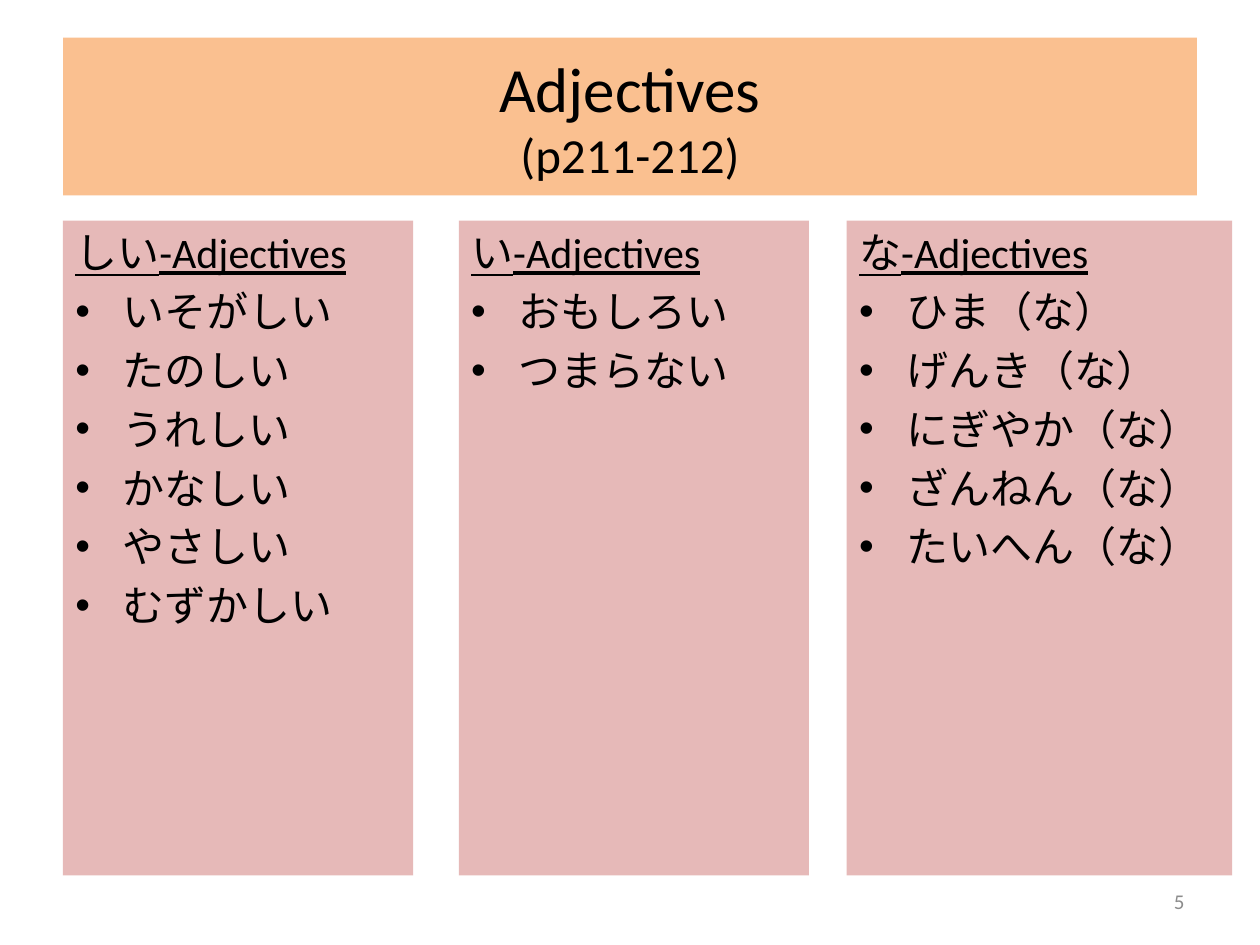
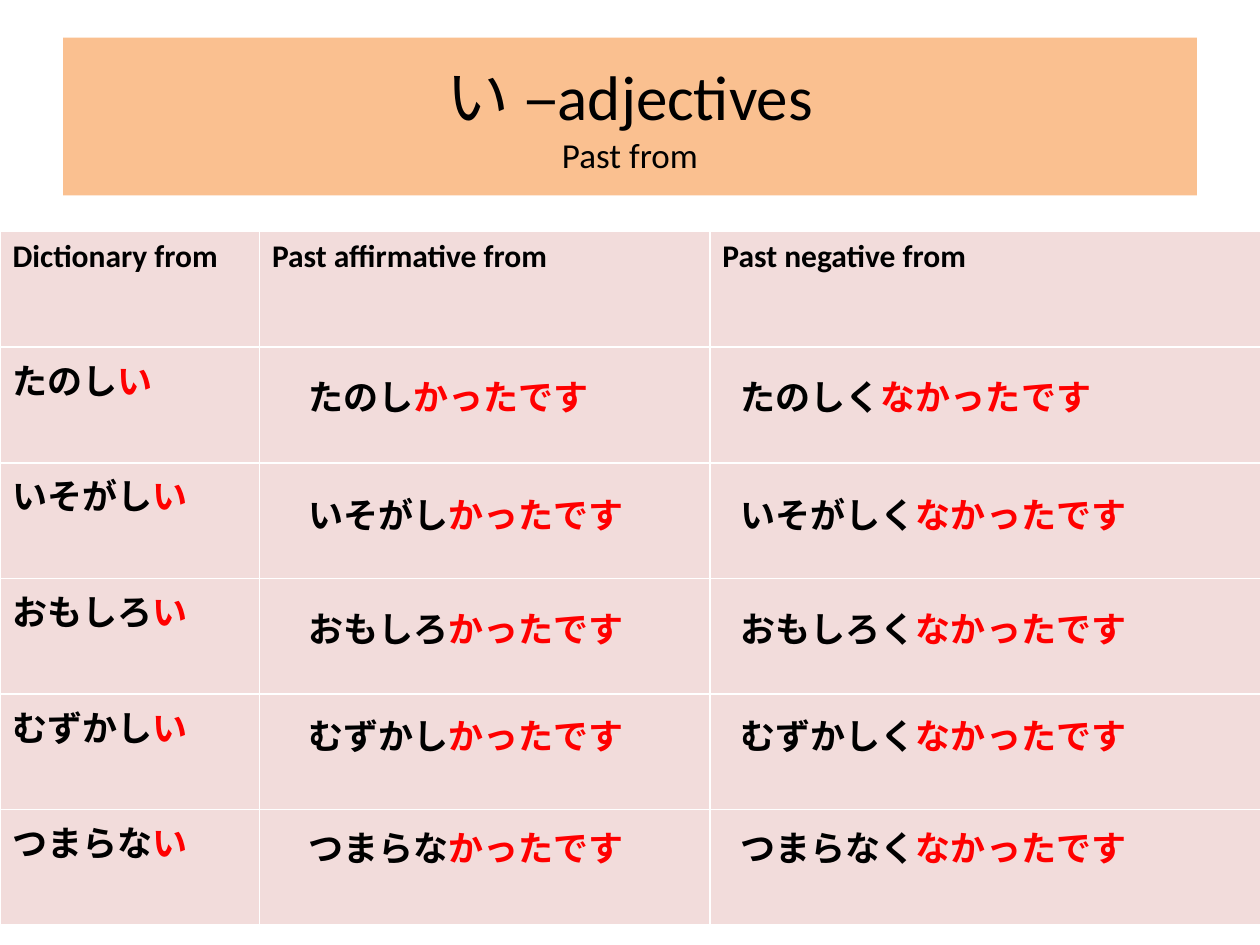
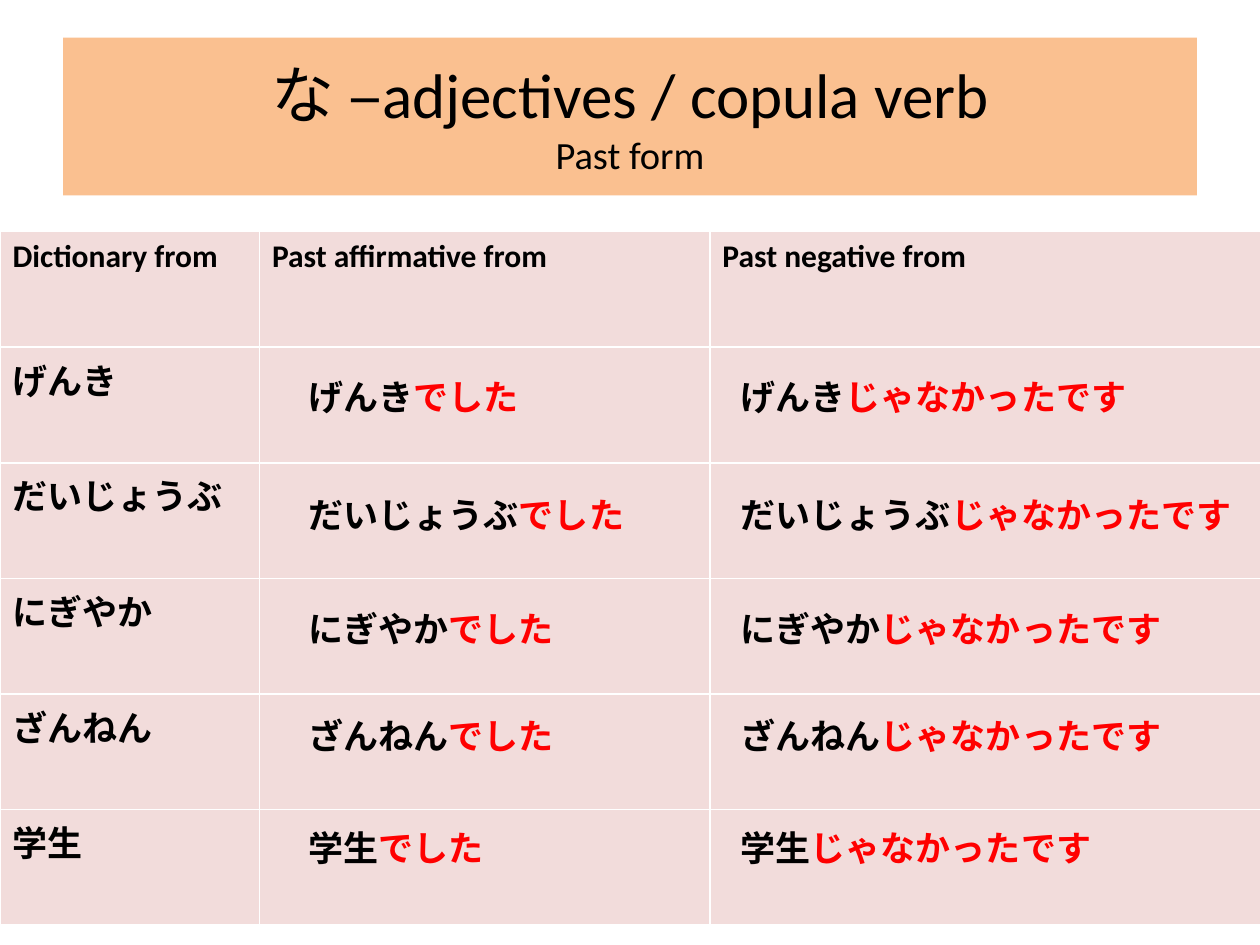
from copy import deepcopy

from lxml import etree
from pptx import Presentation
from pptx.dml.color import RGBColor
from pptx.enum.lang import MSO_LANGUAGE_ID
from pptx.enum.shapes import MSO_SHAPE
from pptx.enum.text import MSO_ANCHOR, MSO_AUTO_SIZE, PP_ALIGN
from pptx.oxml.ns import qn
from pptx.util import Cm, Pt

BLACK = RGBColor(0x00, 0x00, 0x00)
RED = RGBColor(0xFF, 0x00, 0x00)
GREY = RGBColor(0x8C, 0x8C, 0x8C)
ORANGE = RGBColor(0xFA, 0xC0, 0x90)
ROSE = RGBColor(0xE6, 0xB9, 0xB8)
PALE_ROSE = RGBColor(0xF2, 0xDC, 0xDB)

LATIN_FONT = "Calibri"
JAPANESE_FONT = "Lato"
JAPANESE = MSO_LANGUAGE_ID.JAPANESE
RECTANGLE = MSO_SHAPE.RECTANGLE
LEFT, CENTER, RIGHT = PP_ALIGN.LEFT, PP_ALIGN.CENTER, PP_ALIGN.RIGHT
TOP, MIDDLE = MSO_ANCHOR.TOP, MSO_ANCHOR.MIDDLE
NO_FIT, GROW = MSO_AUTO_SIZE.NONE, MSO_AUTO_SIZE.SHAPE_TO_FIT_TEXT

# Panels: left, width, heading, words
PANELS = [
    (1.27, 7.06, "しい",
     ["いそがしい", "たのしい", "うれしい", "かなしい", "やさしい", "むずかしい"]),
    (9.25, 7.06, "い", ["おもしろい", "つまらない"]),
    (17.07, 7.77, "な",
     ["ひま（な）", "げんき（な）", "にぎやか（な）", "ざんねん（な）", "たいへん（な）"]),
]

# Conjugation tables
HEADINGS = ["Dictionary from", "Past affirmative from", "Past negative from"]
COLUMN_WIDTHS = [5.23, 9.08, 11.1]
ROW_HEIGHT = 2.33
ANSWER_TOPS = [7.44, 9.83, 12.12, 14.27, 16.54]
I_STEMS = ["たのし", "いそがし", "おもしろ", "むずかし", "つまらな"]
NA_STEMS = ["げんき", "だいじょうぶ", "にぎやか", "ざんねん", "学生"]


class Deck:
    def __init__(self):
        self.presentation = Presentation()
        self.presentation.slide_width = Cm(25.4)
        self.presentation.slide_height = Cm(19.05)
        self.slide = None

    def add_run(self, paragraph, text, size, font=LATIN_FONT, color=BLACK,
                bold=False, underline=False):
        run = paragraph.add_run()
        run.text = text
        run.font.name = font
        run.font.size = Pt(size)
        run.font.color.rgb = color
        run.font.bold = bold
        run.font.underline = underline
        run.font.language_id = JAPANESE
        return run

    def add_word(self, paragraph, stem, ending):
        """Write a bold word with its ending in red."""
        self.add_run(paragraph, stem, 20, JAPANESE_FONT, bold=True)
        if ending:
            self.add_run(paragraph, ending, 20, JAPANESE_FONT, RED, bold=True)

    def new_slide(self, title, subtitle, subtitle_size):
        layout = self.presentation.slide_layouts.get_by_name("Title Only")
        self.slide = self.presentation.slides.add_slide(layout)
        shape = self.slide.shapes.title
        shape.left, shape.top = Cm(1.27), Cm(0.76)
        shape.width, shape.height = Cm(22.86), Cm(3.18)
        shape.fill.solid()
        shape.fill.fore_color.rgb = ORANGE
        shape.text_frame.auto_size = NO_FIT
        shape.text_frame.vertical_anchor = MIDDLE
        paragraph = shape.text_frame.paragraphs[0]
        paragraph.alignment = CENTER
        run = self.add_run(paragraph, title, 36)
        # The break takes the size of the line it ends
        paragraph.add_line_break()
        line_break = paragraph._p.find(qn("a:br"))
        line_break.append(deepcopy(run._r.find(qn("a:rPr"))))
        self.add_run(paragraph, subtitle, subtitle_size)

    def add_text_box(self, left, top, width, height):
        box = self.slide.shapes.add_textbox(
            Cm(left), Cm(top), Cm(width), Cm(height))
        box.text_frame.word_wrap = True
        return box.text_frame

    def add_page_number(self, number):
        frame = self.add_text_box(18.21, 17.65, 5.92, 1.02)
        frame.vertical_anchor = MIDDLE
        paragraph = frame.paragraphs[0]
        paragraph.alignment = RIGHT
        self.add_run(paragraph, number, 12, color=GREY)

    def format_list_item(self, paragraph, bullet=None):
        paragraph.alignment = LEFT
        paragraph.space_before = Pt(4.8)
        properties = paragraph._p.get_or_add_pPr()
        properties.set("marL", str(Cm(0.95)))
        properties.set("indent", str(-Cm(0.95)))
        if bullet:
            font = etree.SubElement(properties, qn("a:buFont"))
            font.set("typeface", "Arial")
            etree.SubElement(properties, qn("a:buChar")).set("char", bullet)
        else:
            etree.SubElement(properties, qn("a:buNone"))

    def add_panel(self, left, width, heading, words):
        shape = self.slide.shapes.add_shape(
            RECTANGLE, Cm(left), Cm(4.45), Cm(width), Cm(13.2))
        shape.shadow.inherit = False
        shape.fill.solid()
        shape.fill.fore_color.rgb = ROSE
        shape.line.fill.background()
        frame = shape.text_frame
        frame.word_wrap = True
        frame.vertical_anchor = TOP
        paragraph = frame.paragraphs[0]
        self.format_list_item(paragraph)
        self.add_run(paragraph, heading, 24, JAPANESE_FONT, underline=True)
        self.add_run(paragraph, "-Adjectives", 24, underline=True)
        for word in words:
            paragraph = frame.add_paragraph()
            self.format_list_item(paragraph, "•")
            self.add_run(paragraph, word, 24, JAPANESE_FONT)

    def add_table(self, stems, ending):
        row_count = len(stems) + 1
        table = self.slide.shapes.add_table(
            row_count, len(HEADINGS), Cm(0), Cm(4.67),
            Cm(25.4), Cm(ROW_HEIGHT * row_count)).table
        table.horz_banding = False
        for column, width in zip(table.columns, COLUMN_WIDTHS):
            column.width = Cm(width)
        for row in table.rows:
            row.height = Cm(ROW_HEIGHT)
        for cell in table.iter_cells():
            cell.fill.solid()
            cell.fill.fore_color.rgb = PALE_ROSE
        for index, heading in enumerate(HEADINGS):
            paragraph = table.cell(0, index).text_frame.paragraphs[0]
            self.add_run(paragraph, heading, 18, bold=True)
        for index, stem in enumerate(stems, start=1):
            paragraph = table.cell(index, 0).text_frame.paragraphs[0]
            self.add_word(paragraph, stem, ending)

    def add_answers(self, left, width, stems, ending):
        for top, stem in zip(ANSWER_TOPS, stems):
            # The longest word needs a wider box
            box_width = width if len(stem + ending) < 14 else width + 0.51
            frame = self.add_text_box(left, top, box_width, 1.12)
            frame.auto_size = GROW
            self.add_word(frame.paragraphs[0], stem, ending)

    def add_conjugation(self, stems, ending, affirmative, link, negative):
        self.add_table(stems, ending)
        self.add_answers(5.97, 7.06, stems, affirmative)
        self.add_answers(14.68, 10.21, [stem + link for stem in stems], negative)


def main():
    deck = Deck()

    # Adjective lists
    deck.new_slide("Adjectives", "(p211-212)", 28)
    deck.add_page_number("5")
    for panel in PANELS:
        deck.add_panel(*panel)

    # Past of い-adjectives
    deck.new_slide("い –adjectives", "Past from", 20)
    deck.add_conjugation(I_STEMS, "い", "かったです", "く", "なかったです")

    # Past of な-adjectives and the copula
    deck.new_slide("な –adjectives / copula verb", "Past form", 22)
    deck.add_conjugation(NA_STEMS, "", "でした", "", "じゃなかったです")

    deck.presentation.save("out.pptx")


if __name__ == "__main__":
    main()
